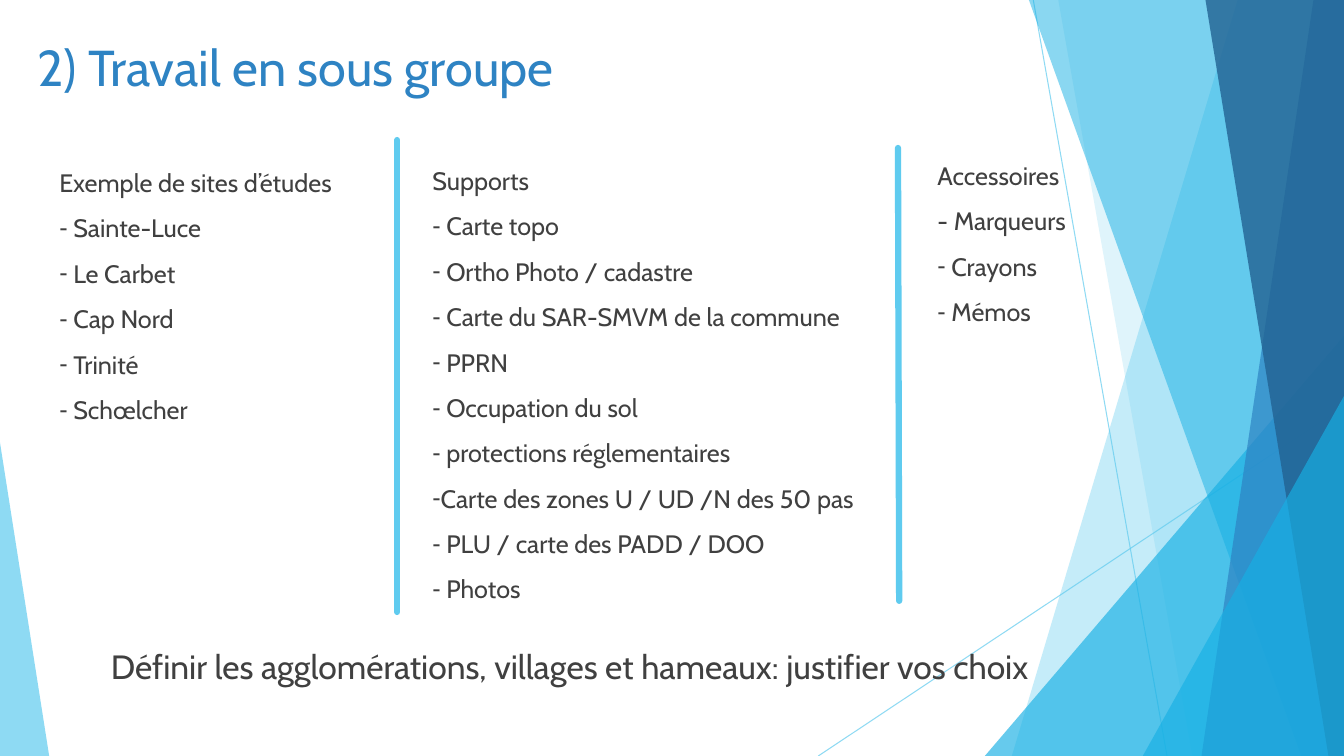
from lxml.etree import SubElement
from pptx import Presentation
from pptx.dml.color import RGBColor
from pptx.enum.shapes import MSO_CONNECTOR as Connector, MSO_SHAPE as Shape
from pptx.enum.text import MSO_ANCHOR as Anchor, MSO_AUTO_SIZE as AutoSize, PP_ALIGN as Align
from pptx.oxml.ns import qn
from pptx.util import Cm, Pt

SKY = RGBColor(0x5F, 0xCB, 0xEF)
CYAN = RGBColor(0x17, 0xB0, 0xE4)
BLUE = RGBColor(0x2E, 0x83, 0xC3)
NAVY = RGBColor(0x22, 0x62, 0x92)
GREY = RGBColor(0x40, 0x40, 0x40)
WIDTH, HEIGHT = 33.87, 19.05


def set_opacity(element, percent):
    colour = next(element.iter(qn("a:srgbClr")))
    SubElement(colour, qn("a:alpha")).set("val", str(percent * 1000))


def add_line(shapes, start, end, weight):
    line = shapes.add_connector(Connector.STRAIGHT, *map(Cm, start + end))
    line.line.color.rgb = SKY
    line.line.width = Pt(weight)
    SubElement(line._element.spPr, qn("a:effectLst"))
    return line


presentation = Presentation()
presentation.slide_width, presentation.slide_height = Cm(WIDTH), Cm(HEIGHT)
slide = presentation.slides.add_slide(presentation.slide_layouts.get_by_name("Comparison"))

# Background facets, behind the text
facets = slide.shapes.add_group_shape()
slide.shapes._spTree.insert(2, facets._element)
for start, end in [((26.04, 0), (29.41, HEIGHT)), ((WIDTH, 10.24), (20.62, HEIGHT))]:
    ray = add_line(facets.shapes, start, end, 0.75)
    set_opacity(ray._element, 70)

# Slab: top and bottom of its left edge. Triangle: left, top, width, apex position
facet_styles = [
    ((31.19, 25.5), SKY, 36),
    ((26.67, 30.05), SKY, 20),
    ((24.82, 8.46, 9.05, 1), CYAN, 66),
    ((25.93, 32.79), CYAN, 50),
    ((33.1, 30.28), BLUE, 70),
    ((30.38, 33.48), NAVY, 80),
    ((28.8, 9.98, 5.07, 1), CYAN, 66),
    ((0, 11.15, 1.24, 0), SKY, 70),
]
for geometry, colour, opacity in facet_styles:
    if len(geometry) == 2:
        top_x, bottom_x = geometry
        builder = facets.shapes.build_freeform(Cm(top_x), 0)
        corners = [(WIDTH, 0), (WIDTH, HEIGHT), (bottom_x, HEIGHT)]
        builder.add_line_segments([(Cm(x), Cm(y)) for x, y in corners])
        facet = builder.convert_to_shape()
    else:
        left, top, width, apex = geometry
        box = map(Cm, (left, top, width, HEIGHT - top))
        facet = facets.shapes.add_shape(Shape.ISOSCELES_TRIANGLE, *box)
        facet.adjustments[0] = apex
    facet.shadow.inherit = False
    facet.fill.solid()
    facet.fill.fore_color.rgb = colour
    facet.line.fill.background()
    set_opacity(facet._element.spPr, opacity)

# Column separators
for start, end in [((10.01, 3.53), (10.01, 15.42)), ((22.63, 3.73), (22.66, 15.14))]:
    separator = add_line(slide.shapes, start, end, 4.5)
    separator.line._ln.set("cap", "rnd")

# Texts: placeholder index, box, size, colour, line spacing, lines, first bulleted line
sites = ["Exemple de sites d’études", " Sainte-Luce", " Le Carbet", " Cap Nord",
         " Trinité", " Schœlcher"]
supports = ["Supports", " Carte topo", " Ortho Photo / cadastre",
            " Carte du SAR-SMVM de la commune", " PPRN", " Occupation du sol",
            " protections réglementaires", "Carte des zones U / UD /N des 50 pas",
            " PLU / carte des PADD / DOO", " Photos"]
accessories = ["Accessoires", "- Marqueurs", " Crayons", " Mémos"]
task = ["Définir les agglomérations, villages et hameaux: justifier vos choix"]
texts = [
    (0, (0.69, 0.79, 16.21, 2.18), 36, BLUE, 1, ["2) Travail en sous groupe"], 1),
    (1, (1.24, 3.71, 8.05, 7.19), 18, GREY, 1.5, sites, 1),
    (2, (10.64, 3.66, 11.89, 12.95), 18, GREY, 1.5, supports, 1),
    (3, (23.37, 3.53, 3.91, 4.88), 18, GREY, 1.5, accessories, 2),
    (4, (2.54, 16.15, 26.14, 1.27), 24, GREY, 1, task, 1),
]
placeholders = {shape.placeholder_format.idx: shape for shape in slide.placeholders}
for index, box, size, colour, spacing, lines, first_bullet in texts:
    placeholder = placeholders[index]
    placeholder.left, placeholder.top, placeholder.width, placeholder.height = map(Cm, box)
    frame = placeholder.text_frame
    frame.text = "\n".join(lines)
    frame.word_wrap = index == 0
    frame.auto_size = AutoSize.NONE if index == 0 else AutoSize.SHAPE_TO_FIT_TEXT
    frame.vertical_anchor = Anchor.TOP
    for number, paragraph in enumerate(frame.paragraphs):
        paragraph.alignment = Align.LEFT
        paragraph.line_spacing = spacing
        paragraph.space_before = paragraph.space_after = Pt(0)
        properties = paragraph._p.get_or_add_pPr()
        properties.set("marL", "0")
        properties.set("indent", "0")
        if number >= first_bullet:
            SubElement(properties, qn("a:buFontTx"))
            SubElement(properties, qn("a:buChar")).set("char", "-")
        else:
            SubElement(properties, qn("a:buNone"))
        font = paragraph.runs[0].font
        font.name, font.size, font.bold = "Cabin", Pt(size), False
        font.color.rgb = colour

presentation.save("out.pptx")
